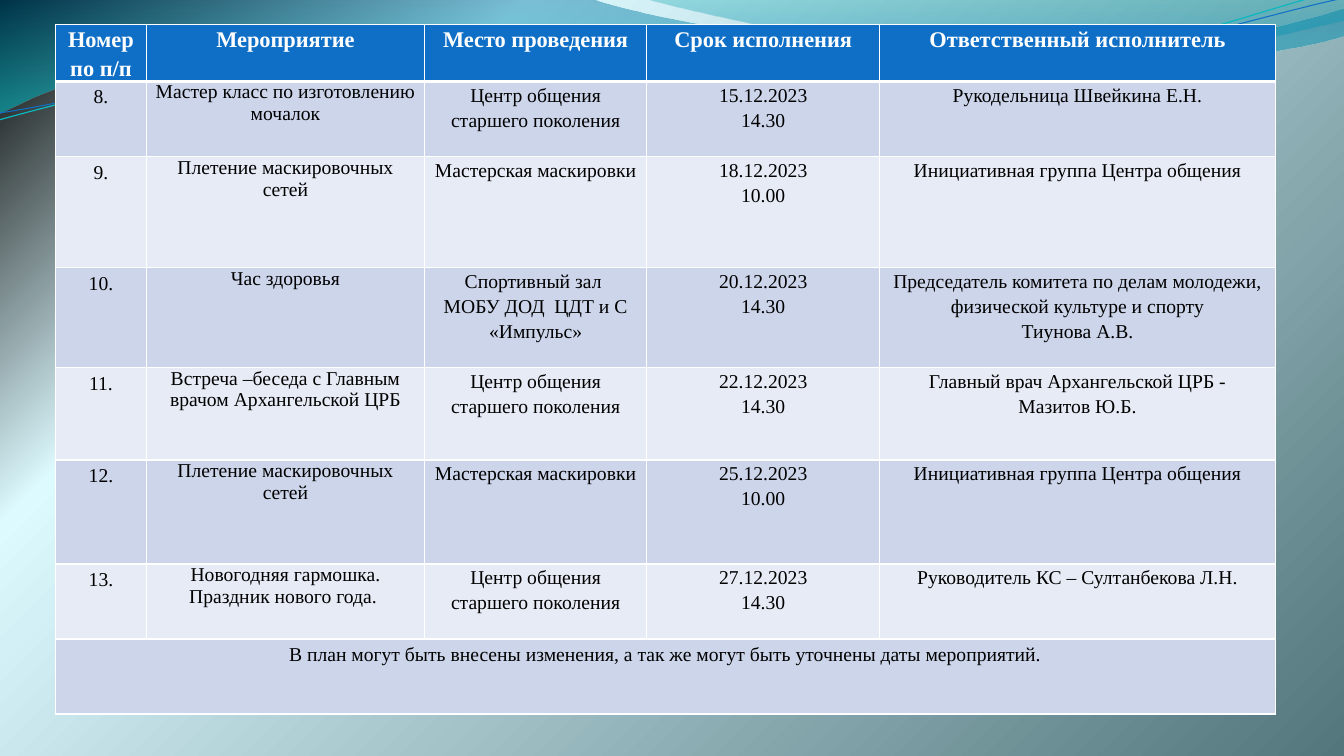
import math
import pptx
import pptx.dml.color
import pptx.enum.text
import pptx.oxml
import pptx.oxml.ns
import pptx.util

Cm = pptx.util.Cm
Pt = pptx.util.Pt
qn = pptx.oxml.ns.qn
INCH = 2.54
FONT = "Times New Roman"
COLOURS = {
    "header": "0F6FC6", "dark_band": "CCD5EA", "light_band": "E7EBF5",
    "white": "FFFFFF", "black": "000000", "ice": "DDFAFF", "slate": "52767C",
    "deep_teal": "0074A1", "aqua": "00C6CF", "sea": "00A1A9", "azure": "008BBF",
    "cyan_line": "0AB8BF",
}
COLUMN_WIDTHS = [2.29, 7.01, 5.6, 5.87, 9.97]
ROW_HEIGHTS = [1.44, 1.9, 2.79, 2.52, 2.33, 2.62, 1.89, 1.89]
HEADINGS = ["Номер по п/п", "Мероприятие", "Место проведения",
            "Срок исполнения", "Ответственный исполнитель"]
CENTRE = "Центр общения старшего поколения"
WORKSHOP = "Мастерская маскировки"
NETS = "Плетение маскировочных сетей"
GROUP = "Инициативная группа Центра общения"
DOCTOR = "Главный врач Архангельской ЦРБ - Мазитов Ю.Б."
EVENTS = [
    ["8.", "Мастер класс по изготовлению мочалок", CENTRE,
     "15.12.2023\n14.30", "Рукодельница Швейкина Е.Н."],
    ["9.", NETS, WORKSHOP, "18.12.2023\n10.00", GROUP],
    ["10.", "Час здоровья", "Спортивный зал \nМОБУ ДОД  ЦДТ и С «Импульс»",
     "20.12.2023\n14.30",
     "Председатель комитета по делам молодежи, физической культуре и спорту\nТиунова А.В."],
    ["11.", "Встреча –беседа с Главным врачом Архангельской ЦРБ", CENTRE,
     "22.12.2023\n14.30", DOCTOR],
    ["12.", NETS, WORKSHOP, "25.12.2023\n10.00", GROUP],
    ["13.", "Новогодняя гармошка. Праздник нового года. ", CENTRE,
     "27.12.2023\n14.30", "Руководитель КС – Султанбекова Л.Н."],
]
FOOTNOTE = "В план могут быть внесены изменения, а так же могут быть уточнены даты мероприятий."

WIDE_RIBBON = [
    [(0, 0)], [(5.87, -0.01)],
    [(6.34, 0.17), (8.85, 0.63), (10.11, 0.63)],
    [(11.38, 0.63), (12.78, 0.26), (13.33, 0.09)],
    [(13.35, 0.36)],
    [(13.11, 0.44), (11.6, 0.76), (9.94, 0.75)],
    [(8.29, 0.75), (5.09, 0.28), (3.43, 0.34)],
    [(1.72, 0.36), (0.61, 0.83), (-0.01, 1.13)],
    [(0, 0)],
]
RIGHT_RIBBON = [
    [(6.39, -0.01)],
    [(6.79, 0.11), (9.09, 0.62), (10.25, 0.65)],
    [(11.41, 0.69), (12.82, 0.32), (13.33, 0.21)],
    [(13.33, 0)], [(6.39, -0.01)],
]
CYAN_WAVE = [
    [(-0.01, 1.19)],
    [(0.64, 1.01), (2.11, 0.62), (3.69, 0.55)],
    [(5.27, 0.48), (7.9, 0.87), (9.5, 0.76)],
    [(11.1, 0.66), (12.52, 0.08), (13.31, -0.1)],
]
BLUE_WAVE = [
    [(0, 1.12)],
    [(0.63, 1.03), (2.18, 0.66), (3.78, 0.59)],
    [(5.37, 0.53), (7.96, 0.82), (9.55, 0.72)],
    [(11.15, 0.62), (12.55, 0.14), (13.34, -0.02)],
]
WAVE_TILT = -2.7


def colour(name):
    return pptx.dml.color.RGBColor.from_string(COLOURS[name])


def set_gradient(fill, holder, stops, direction):
    fill.gradient()
    stop_xml = "".join(
        f'<a:gs pos="{position * 1000}"><a:srgbClr val="{COLOURS[name]}">'
        f'<a:alpha val="{opacity * 1000}"/></a:srgbClr></a:gs>'
        for position, name, opacity in stops)
    gradient = pptx.oxml.parse_xml(
        f'<a:gradFill {pptx.oxml.ns.nsdecls("a")} rotWithShape="1">'
        f'<a:gsLst>{stop_xml}</a:gsLst>{direction}</a:gradFill>')
    previous = holder.find(".//" + qn("a:gradFill"))
    previous.getparent().replace(previous, gradient)


def turn(segments, degrees, centre):
    cosine, sine = math.cos(math.radians(degrees)), math.sin(math.radians(degrees))
    middle_x, middle_y = centre
    return [[(middle_x + (x - middle_x) * cosine - (y - middle_y) * sine,
              middle_y + (x - middle_x) * sine + (y - middle_y) * cosine)
             for x, y in segment] for segment in segments]


def add_curve(shapes, segments, closed):
    points = [(Cm(x * INCH), Cm(y * INCH)) for segment in segments for x, y in segment]
    builder = shapes.build_freeform(*points[0], scale=1.0)
    builder.add_line_segments(points[1:], close=closed)
    shape = builder.convert_to_shape()
    shape.shadow.inherit = False
    outline = shape.element.find(".//" + qn("a:path"))
    lines = iter(outline.findall(qn("a:lnTo")))
    for segment in segments[1:]:
        pieces = [next(lines) for _ in segment]
        if len(pieces) == 3:
            bend = pptx.oxml.parse_xml(f'<a:cubicBezTo {pptx.oxml.ns.nsdecls("a")}/>')
            pieces[0].addprevious(bend)
            for piece in pieces:
                bend.append(piece[0])
                outline.remove(piece)
    return shape


def add_backdrop(page):
    set_gradient(page.background.fill, page.element,
                 [(0, "black", 100), (25, "ice", 100), (100, "slate", 100)],
                 '<a:path path="circle"><a:fillToRect r="100000" b="100000"/></a:path>')
    for segments, stops in (
            (WIDE_RIBBON, [(0, "deep_teal", 45), (100, "aqua", 55)]),
            (RIGHT_RIBBON, [(0, "sea", 30), (80, "azure", 45)])):
        ribbon = add_curve(page.shapes, segments, True)
        set_gradient(ribbon.fill, ribbon.element, stops, '<a:lin ang="5400000" scaled="0"/>')
        ribbon.line.fill.background()
    waves = page.shapes.add_group_shape()
    for segments, centre, name, width in (
            (CYAN_WAVE, (6.65, 0.58), "cyan_line", 0.85),
            (BLUE_WAVE, (6.67, 0.59), "header", 0.75)):
        wave = add_curve(waves.shapes, turn(segments, -WAVE_TILT, centre), False)
        wave.rotation = WAVE_TILT
        wave.fill.background()
        wave.line.color.rgb = colour(name)
        wave.line.width = Pt(width)


def set_borders(cell, top, bottom):
    properties = cell._tc.get_or_add_tcPr()
    for index, (side, width) in enumerate((("L", 1), ("R", 1), ("T", top), ("B", bottom))):
        properties.insert(index, pptx.oxml.parse_xml(
            f'<a:ln{side} {pptx.oxml.ns.nsdecls("a")} w="{Pt(width)}"><a:solidFill>'
            f'<a:srgbClr val="{COLOURS["white"]}"/></a:solidFill></a:ln{side}>'))


def format_cell(cell, text, row, column):
    header = row == 0
    cell.text = text
    cell.fill.solid()
    cell.fill.fore_color.rgb = colour("header" if header else "dark_band" if row % 2 else "light_band")
    if header or column > 0:
        cell.margin_left = cell.margin_right = Cm(0.3 if text == DOCTOR else 0.18)
        cell.margin_top = cell.margin_bottom = 0
    for para in cell.text_frame.paragraphs:
        para.alignment = pptx.enum.text.PP_ALIGN.CENTER
        para.line_spacing = 1.15 if header or column > 1 else 1.0
        if text == DOCTOR:
            para.space_after = Pt(10)
        for span in para.runs:
            span.font.name = FONT
            span.font.size = Pt(16 if header else 14)
            span.font.bold = header
            span.font.color.rgb = colour("white" if header else "black")
    set_borders(cell, 3 if row == 1 else 1, 3 if header else 1)


def add_plan(page, left, top):
    rows = [HEADINGS, *EVENTS, [FOOTNOTE]]
    table = page.shapes.add_table(
        len(rows), len(HEADINGS), left, top,
        Cm(sum(COLUMN_WIDTHS)), Cm(sum(ROW_HEIGHTS))).table
    table.horz_banding = False
    for column, width in zip(table.columns, COLUMN_WIDTHS):
        column.width = Cm(width)
    for row, height in zip(table.rows, ROW_HEIGHTS):
        row.height = Cm(height)
    last = len(rows) - 1
    table.cell(last, 0).merge(table.cell(last, len(HEADINGS) - 1))
    for row, texts in enumerate(rows):
        for column, text in enumerate(texts):
            format_cell(table.cell(row, column), text, row, column)


def main():
    deck = pptx.Presentation()
    deck.slide_width, deck.slide_height = Cm(33.87), Cm(19.05)
    page = deck.slides.add_slide(deck.slide_layouts[6])
    add_backdrop(page)
    add_plan(page, Cm(1.4), Cm(0.61))
    deck.save("out.pptx")


if __name__ == "__main__":
    main()
